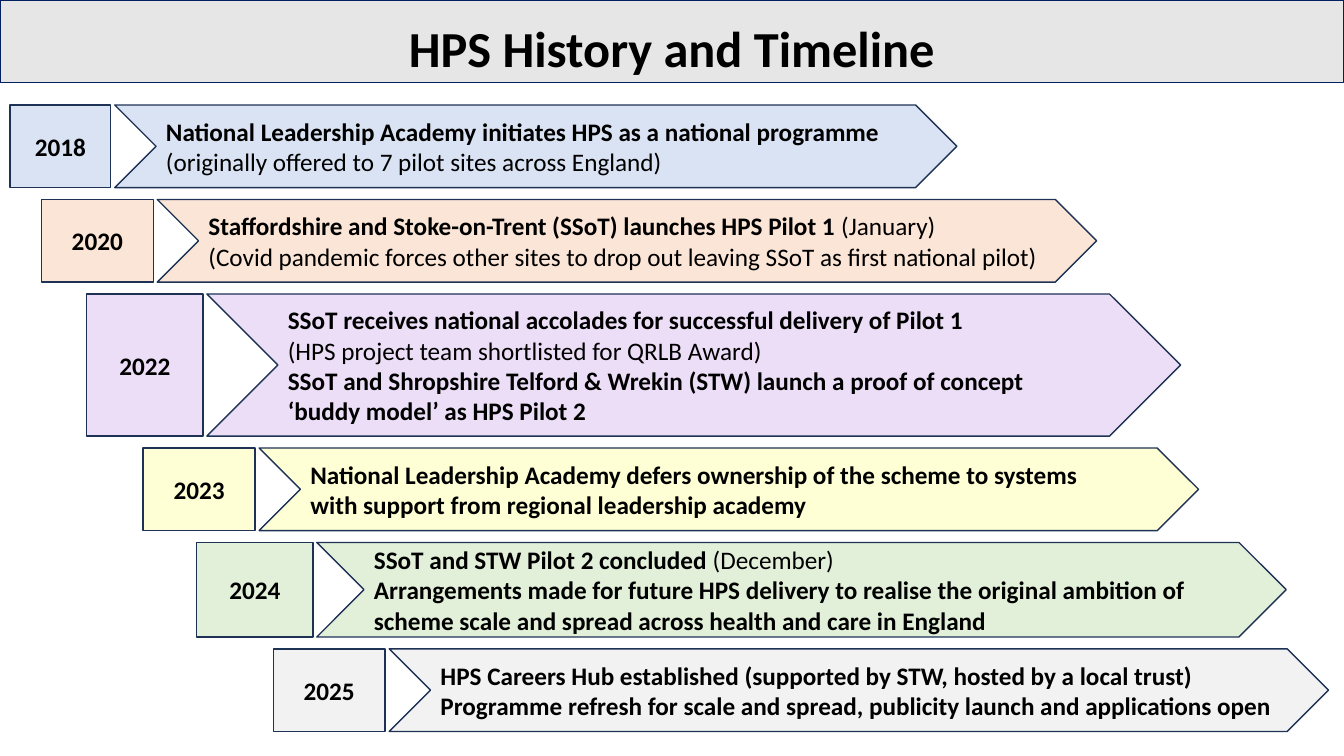
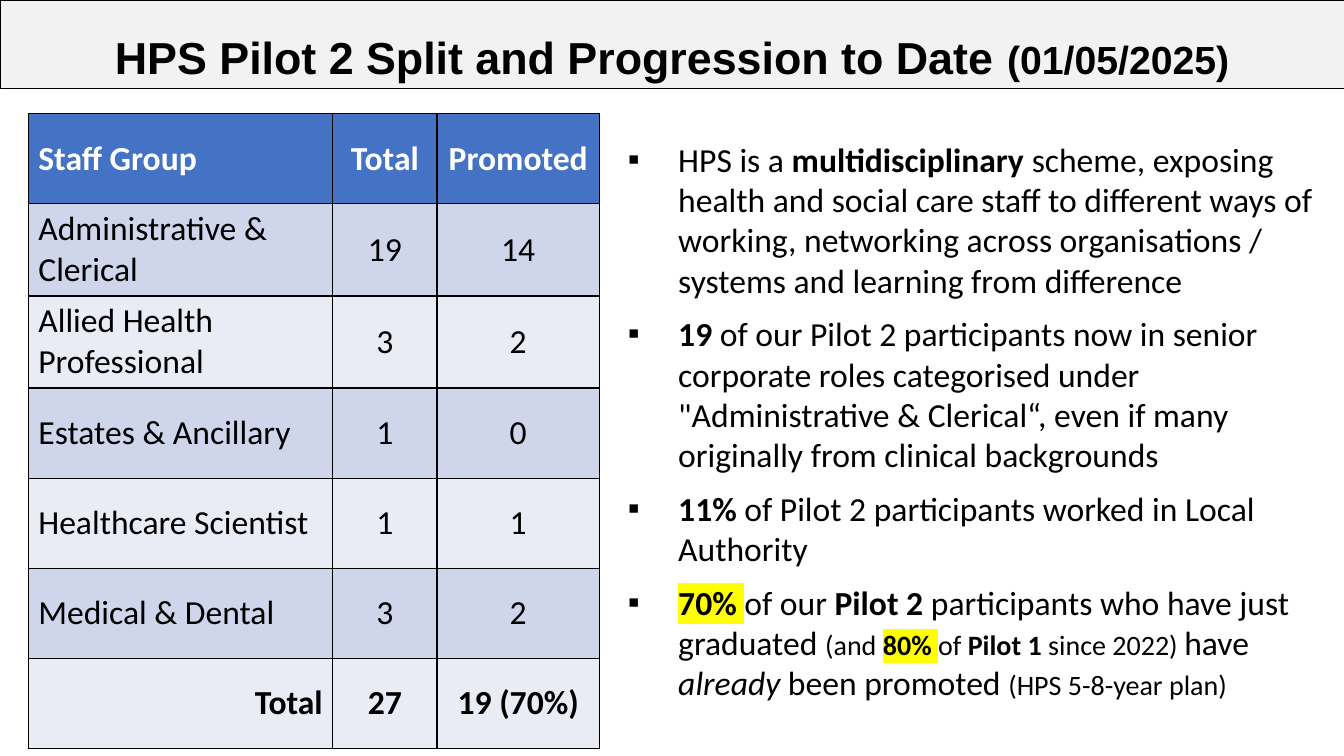
from lxml.etree import SubElement
from pptx import Presentation
from pptx.dml.color import RGBColor
from pptx.enum.shapes import MSO_SHAPE
from pptx.enum.text import MSO_ANCHOR, PP_ALIGN
from pptx.oxml import parse_xml
from pptx.oxml.ns import nsdecls, qn
from pptx.util import Pt

BLACK = "000000"
WHITE = "FFFFFF"
NAVY = "1E3256"
HIGHLIGHT = "FFFF00"
SLIDE_WIDTH = 960
YEAR_GAP = 2.8
ROW_GAP = 8.5


def add_spans(para, spans, size, font="Calibri", colour=BLACK):
    for text, style in spans:
        span = para.add_run()
        span.text = text
        span.font.size = Pt(style.get("size", size))
        span.font.bold = style.get("bold", False)
        span.font.italic = style.get("italic", False)
        span.font.color.rgb = RGBColor.from_string(colour)
        if "highlight" in style:
            mark = SubElement(span.font._element, qn("a:highlight"))
            SubElement(mark, qn("a:srgbClr"), val=style["highlight"])
        span.font.name = font


def add_box(shapes, kind, left, top, width, height, fill, line, weight, anchor, align):
    box = shapes.add_shape(kind, Pt(left), Pt(top), Pt(width), Pt(height))
    box.shadow.inherit = False
    box.fill.solid()
    box.fill.fore_color.rgb = RGBColor.from_string(fill)
    box.line.color.rgb = RGBColor.from_string(line)
    box.line.width = Pt(weight)
    box.text_frame.vertical_anchor = anchor
    box.text_frame.paragraphs[0].alignment = align
    return box


plain = {}
bold = {"bold": True}
italic = {"italic": True}
small = {"size": 20}
small_bold = {"size": 20, "bold": True}
marked = {"bold": True, "highlight": HIGHLIGHT}
small_marked = {"size": 20, "bold": True, "highlight": HIGHLIGHT}

deck = Presentation()
deck.slide_width = Pt(SLIDE_WIDTH)
deck.slide_height = Pt(540)

titles = [
    (59, "E7E6E6", "002060", 0.75, "Calibri", 36, [("HPS History and Timeline", bold)]),
    (62.9, "F2F2F2", BLACK, 0.25, "Arial", 32, [
        ("HPS Pilot 2 Split and Progression to Date ", bold),
        ("(01/05/2025)", {"bold": True, "size": 28})]),
]
pages = []
for height, fill, line, weight, font, size, spans in titles:
    page = deck.slides.add_slide(deck.slide_layouts[6])
    band = add_box(page.shapes, MSO_SHAPE.RECTANGLE, 0, 0, SLIDE_WIDTH, height,
                   fill, line, weight, MSO_ANCHOR.BOTTOM, PP_ALIGN.CENTER)
    add_spans(band.text_frame.paragraphs[0], spans, size, font)
    pages.append(page)
timeline_page, progress_page = pages

milestones = [
    ("2018", 7.2, 72, 601.5, 59, "DAE3F3", [
        [("National Leadership Academy initiates HPS as a national programme", bold)],
        [("(originally offered to 7 pilot sites across England)", plain)]]),
    ("2020", 29.5, 80, 671, 59, "FBE5D6", [
        [("Staffordshire and Stoke-on-Trent (SSoT) launches HPS Pilot 1 ", bold),
         ("(January)", plain)],
        [("(Covid pandemic forces other sites to drop out leaving SSoT as first national pilot)",
          plain)]]),
    ("2022", 62, 83, 695.5, 101.5, "ECDEF6", [
        [("SSoT receives national accolades for successful delivery of Pilot 1", bold)],
        [("(HPS project team shortlisted for QRLB Award)", plain)],
        [("SSoT and Shropshire Telford & Wrekin (STW) launch a proof of concept "
          "‘buddy model’ as HPS Pilot 2", bold)]]),
    ("2023", 102.3, 80, 671, 59, "FFFFD5", [
        [("National Leadership Academy defers ownership of the scheme to systems", bold)],
        [("with support from regional leadership academy", bold)]]),
    ("2024", 140.5, 83, 692.5, 67.5, "E2F0D9", [
        [("SSoT and STW Pilot 2 concluded ", bold), ("(December)", plain)],
        [("Arrangements made for future HPS delivery to realise the original ambition of "
          "scheme scale and spread across health and care in England", bold)]]),
    ("2025", 195.2, 80, 671, 59, "F2F2F2", [
        [("HPS Careers Hub established (supported by STW, hosted by a local trust)", bold)],
        [("Programme refresh for scale and spread, publicity launch and applications open",
          bold)]]),
]
top = 75
for year, left, year_width, arrow_width, height, fill, lines in milestones:
    group = timeline_page.shapes.add_group_shape()
    arrow = add_box(group.shapes, MSO_SHAPE.CHEVRON, left + year_width + YEAR_GAP, top,
                    arrow_width, height, fill, NAVY, 1, MSO_ANCHOR.MIDDLE, PP_ALIGN.LEFT)
    for index, spans in enumerate(lines):
        frame = arrow.text_frame
        para = frame.add_paragraph() if index else frame.paragraphs[0]
        para.alignment = PP_ALIGN.LEFT
        add_spans(para, spans, 18)
    year_box = add_box(group.shapes, MSO_SHAPE.RECTANGLE, left, top, year_width, height,
                       fill, NAVY, 1, MSO_ANCHOR.MIDDLE, PP_ALIGN.CENTER)
    add_spans(year_box.text_frame.paragraphs[0], [(year, bold)], 18)
    top += height + ROW_GAP

staff_rows = [
    ("Staff Group", "Total", "Promoted"),
    ("Administrative & Clerical", "19", "14"),
    ("Allied Health Professional", "3", "2"),
    ("Estates & Ancillary", "1", "0"),
    ("Healthcare Scientist", "1", "1"),
    ("Medical & Dental", "3", "2"),
    ("Total", "27", "19 (70%)"),
]
column_widths = [217.5, 74.5, 116]
row_height = 64.4
last_row = len(staff_rows) - 1
table = progress_page.shapes.add_table(
    len(staff_rows), len(column_widths), Pt(20.2), Pt(81.2),
    Pt(sum(column_widths)), Pt(row_height * len(staff_rows))).table
for column, width in zip(table.columns, column_widths):
    column.width = Pt(width)
for row_index, row in enumerate(staff_rows):
    table.rows[row_index].height = Pt(row_height)
    header = row_index == 0
    fill = "4472C4" if header else "CFD5EA" if row_index % 2 else "E9EBF5"
    for column_index, text in enumerate(row):
        cell = table.cell(row_index, column_index)
        cell.vertical_anchor = MSO_ANCHOR.MIDDLE
        cell.fill.solid()
        cell.fill.fore_color.rgb = RGBColor.from_string(fill)
        para = cell.text_frame.paragraphs[0]
        if column_index:
            para.alignment = PP_ALIGN.CENTER
        else:
            para.alignment = PP_ALIGN.RIGHT if row_index == last_row else PP_ALIGN.LEFT
        style = bold if row_index in (0, last_row) else plain
        add_spans(para, [(text, style)], 24, colour=WHITE if header else BLACK)
        properties = cell._tc.get_or_add_tcPr()
        for position, side in enumerate(("lnL", "lnR", "lnT", "lnB")):
            properties.insert(position, parse_xml(
                f'<a:{side} {nsdecls("a")} w="{Pt(1)}"><a:solidFill>'
                f'<a:srgbClr val="{BLACK}"/></a:solidFill></a:{side}>'))

findings = [
    [("HPS is a ", plain), ("multidisciplinary ", bold),
     ("scheme, exposing health and social care staff to different ways of working, "
      "networking across organisations / systems and learning from difference", plain)],
    [("19", bold),
     (" of our Pilot 2 participants now in senior corporate roles categorised under "
      '"Administrative & Clerical“, even if many originally from clinical backgrounds', plain)],
    [("11%", bold), (" of Pilot 2 participants worked in Local Authority", plain)],
    [("70% ", marked), ("of our ", plain), ("Pilot 2", bold),
     (" participants who have just graduated ", plain), ("(and ", small),
     ("80% ", small_marked), ("of ", small), ("Pilot 1", small_bold),
     (" since 2022) ", small), ("have ", plain), ("already", italic),
     (" been promoted ", plain), ("(HPS 5-8-year plan)", small)],
]
findings_box = progress_page.shapes.add_textbox(Pt(441.4), Pt(95.5), Pt(508.3), Pt(414.7))
frame = findings_box.text_frame
frame.word_wrap = True
for index, spans in enumerate(findings):
    para = frame.add_paragraph() if index else frame.paragraphs[0]
    para.space_before = Pt(9.5 if index else 0)
    properties = para._p.get_or_add_pPr()
    properties.set("marL", str(Pt(36)))
    properties.set("indent", str(-Pt(36)))
    SubElement(properties, qn("a:buFont"), typeface="Arial")
    SubElement(properties, qn("a:buChar"), char="▪")
    add_spans(para, spans, 24)

deck.save("out.pptx")
